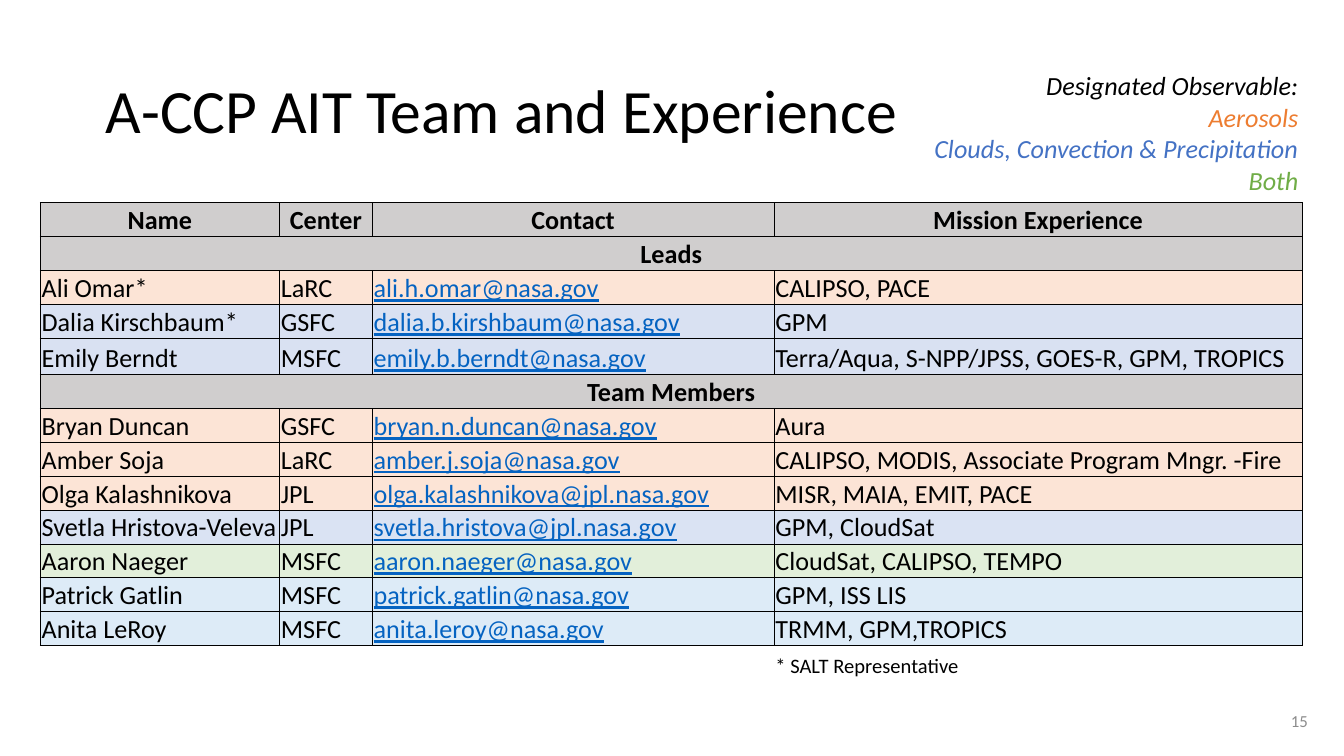
"""Build the A-CCP AIT team and experience slide."""
from lxml.etree import SubElement
from pptx import Presentation
from pptx.dml.color import RGBColor
from pptx.enum.text import MSO_ANCHOR as Anchor, PP_ALIGN as Align
from pptx.oxml.ns import qn
from pptx.util import Inches, Pt

BLACK = RGBColor(0x00, 0x00, 0x00)
NUMBER_GRAY = RGBColor(0x8C, 0x8C, 0x8C)
LINK_BLUE = RGBColor(0x05, 0x63, 0xC1)
ORANGE = RGBColor(0xED, 0x7D, 0x31)
BLUE = RGBColor(0x44, 0x72, 0xC4)
GREEN = RGBColor(0x70, 0xAD, 0x47)
HEADING_FILL = RGBColor(0xD0, 0xCE, 0xCE)
AEROSOL_FILL = RGBColor(0xFC, 0xE4, 0xD6)
LEAD_CLOUD_FILL = RGBColor(0xD9, 0xE1, 0xF2)
MEMBER_CLOUD_FILL = RGBColor(0xDA, 0xE3, 0xF3)
PALE_CLOUD_FILL = RGBColor(0xDD, 0xEB, 0xF7)
BOTH_FILL = RGBColor(0xE2, 0xEF, 0xDA)

TITLE = [("A-CCP AIT Team and Experience", BLACK)]
PAGE_NUMBER = [("15", NUMBER_GRAY)]
LEGEND = [
    ("Designated Observable:", BLACK),
    ("Aerosols", ORANGE),
    ("Clouds, Convection & Precipitation", BLUE),
    ("Both", GREEN),
]
TEAM = [
    (HEADING_FILL, ["Name", "Center", "Contact", "Mission Experience"]),
    (HEADING_FILL, ["Leads"]),
    (AEROSOL_FILL, ["Ali Omar*", "LaRC", "ali.h.omar@nasa.gov", "CALIPSO, PACE"]),
    (LEAD_CLOUD_FILL, ["Dalia Kirschbaum*", "GSFC", "dalia.b.kirshbaum@nasa.gov", "GPM"]),
    (LEAD_CLOUD_FILL, ["Emily Berndt", "MSFC", "emily.b.berndt@nasa.gov",
                       "Terra/Aqua, S-NPP/JPSS, GOES-R, GPM, TROPICS"]),
    (HEADING_FILL, ["Team Members"]),
    (AEROSOL_FILL, ["Bryan Duncan", "GSFC", "bryan.n.duncan@nasa.gov", "Aura"]),
    (AEROSOL_FILL, ["Amber Soja", "LaRC", "amber.j.soja@nasa.gov",
                    "CALIPSO, MODIS, Associate Program Mngr. -Fire"]),
    (AEROSOL_FILL, ["Olga Kalashnikova", "JPL", "olga.kalashnikova@jpl.nasa.gov",
                    "MISR, MAIA, EMIT, PACE"]),
    (MEMBER_CLOUD_FILL, ["Svetla Hristova-Veleva", "JPL", "svetla.hristova@jpl.nasa.gov",
                         "GPM, CloudSat"]),
    (BOTH_FILL, ["Aaron Naeger", "MSFC", "aaron.naeger@nasa.gov", "CloudSat, CALIPSO, TEMPO"]),
    (PALE_CLOUD_FILL, ["Patrick Gatlin", "MSFC", "patrick.gatlin@nasa.gov", "GPM, ISS LIS"]),
    (PALE_CLOUD_FILL, ["Anita LeRoy", "MSFC", "anita.leroy@nasa.gov", "TRMM, GPM,TROPICS"]),
    (None, ["", "", "", "* SALT Representative"]),
]
SLIDE_WIDTH = 10
SLIDE_HEIGHT = SLIDE_WIDTH * 9 / 16
COLUMN_WIDTHS = [1.78, 0.69, 2.99, 3.93]
TABLE_HEIGHT = 3.55
TALL_ROW, TALL_HEIGHT = 4, 0.27
ROW_HEIGHT = (TABLE_HEIGHT - TALL_HEIGHT) / (len(TEAM) - 1)
CELL_FORMAT = {
    "vertical_anchor": Anchor.BOTTOM,
    "margin_left": Inches(0.01),
    "margin_right": Inches(0.01),
    "margin_top": Inches(0.01),
    "margin_bottom": 0,
}


def write(paragraph, text, color, **font_format):
    run = paragraph.add_run()
    run.text = text
    run.font.color.rgb = color
    for name, value in {"name": "Calibri", **font_format}.items():
        setattr(run.font, name, value)


def add_text(slide, box, lines, anchor, align, spacing=None, **font_format):
    frame = slide.shapes.add_textbox(*map(Inches, box)).text_frame
    frame.word_wrap = True
    frame.vertical_anchor = anchor
    for index, (text, color) in enumerate(lines):
        paragraph = frame.add_paragraph() if index else frame.paragraphs[0]
        paragraph.alignment = align
        paragraph.line_spacing = spacing
        write(paragraph, text, color, **font_format)


def add_borders(cell, drawn_sides):
    properties = cell._tc.get_or_add_tcPr()
    for side in "LRTB":
        line = SubElement(properties, qn(f"a:ln{side}"), w=str(Pt(0.5)))
        if side in drawn_sides:
            solid = SubElement(line, qn("a:solidFill"))
            SubElement(solid, qn("a:srgbClr"), val=str(BLACK))
        else:
            SubElement(line, qn("a:noFill"))


def fill_cell(cell, text, fill, is_link):
    for name, value in CELL_FORMAT.items():
        setattr(cell, name, value)
    add_borders(cell, "LRTB" if fill else "T")
    if fill:
        cell.fill.solid()
        cell.fill.fore_color.rgb = fill
    else:
        cell.fill.background()
    paragraph = cell.text_frame.paragraphs[0]
    is_heading = fill == HEADING_FILL
    paragraph.alignment = Align.CENTER if is_heading else Align.LEFT
    if text:
        write(paragraph, text, LINK_BLUE if is_link else BLACK,
              size=Pt(14 if fill else 11), bold=is_heading, underline=is_link)
    else:
        SubElement(paragraph._p, qn("a:endParaRPr"), sz="1100")


def add_team_table(slide):
    count = len(COLUMN_WIDTHS)
    box = 0.3, 1.51, sum(COLUMN_WIDTHS), TABLE_HEIGHT
    table = slide.shapes.add_table(len(TEAM), count, *map(Inches, box)).table
    table.first_row = table.horz_banding = False
    for column, width in zip(table.columns, COLUMN_WIDTHS):
        column.width = Inches(width)
    for row_index, (fill, texts) in enumerate(TEAM):
        height = TALL_HEIGHT if row_index == TALL_ROW else ROW_HEIGHT
        table.rows[row_index].height = Inches(height)
        for column_index in range(count):
            text = texts[column_index] if column_index < len(texts) else ""
            fill_cell(table.cell(row_index, column_index), text, fill, "@" in text)
        if len(texts) == 1:
            table.cell(row_index, 0).merge(table.cell(row_index, count - 1))


def main():
    presentation = Presentation()
    presentation.slide_width = Inches(SLIDE_WIDTH)
    presentation.slide_height = Inches(SLIDE_HEIGHT)
    slide = presentation.slides.add_slide(presentation.slide_layouts[6])
    add_text(slide, (0.69, 0.3, 8.62, 1.09), TITLE, Anchor.MIDDLE, Align.LEFT,
             spacing=0.9, size=Pt(33))
    add_text(slide, (7.58, 5.21, 2.25, 0.3), PAGE_NUMBER, Anchor.MIDDLE, Align.RIGHT,
             size=Pt(9))
    add_text(slide, (6.06, 0.47, 3.7, 1.04), LEGEND, Anchor.TOP, Align.RIGHT,
             size=Pt(14), italic=True)
    add_team_table(slide)
    presentation.save("out.pptx")


if __name__ == "__main__":
    main()
